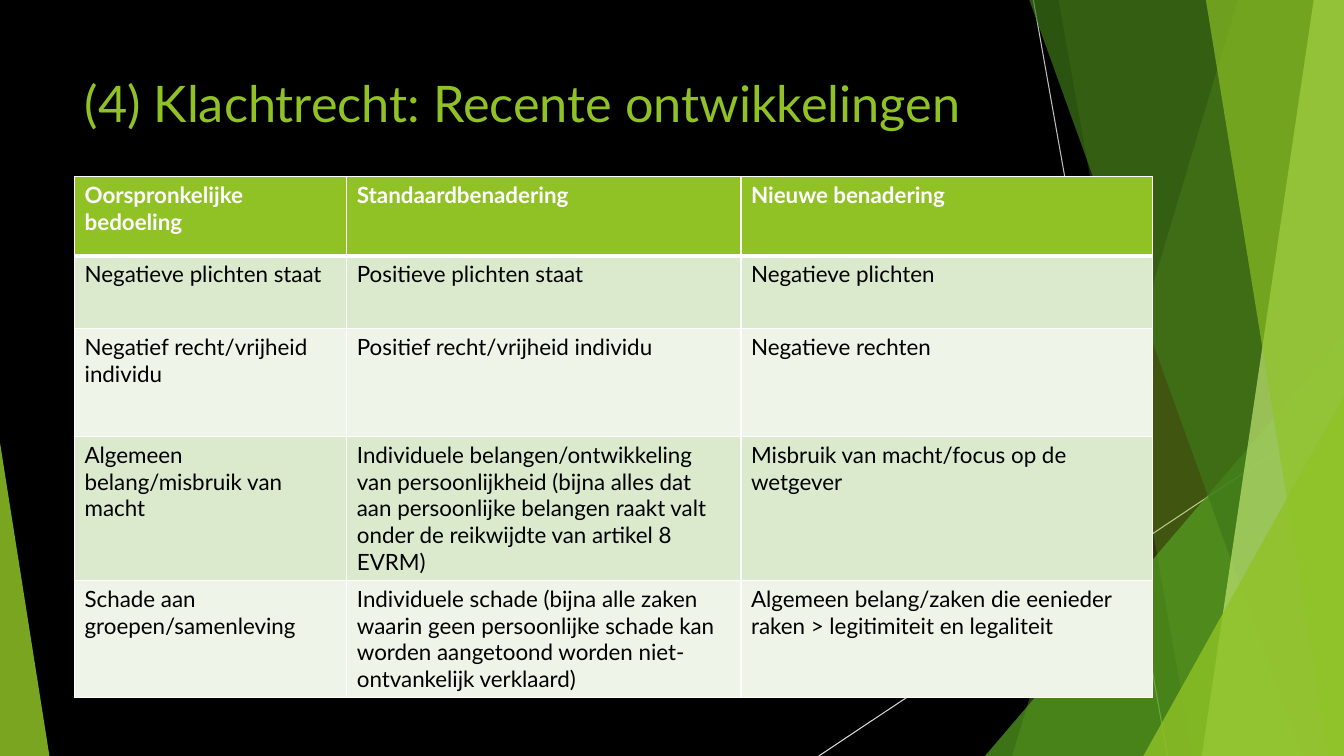
from dataclasses import dataclass

import lxml.etree
import pptx
import pptx.dml.color
import pptx.enum.shapes
import pptx.enum.text
import pptx.oxml.ns
import pptx.util

RGBColor = pptx.dml.color.RGBColor
BLACK = RGBColor(0x00, 0x00, 0x00)
WHITE = RGBColor(0xFF, 0xFF, 0xFF)
GREY = RGBColor(0xBF, 0xBF, 0xBF)
LIGHT_GREY = RGBColor(0xD9, 0xD9, 0xD9)
LIME = RGBColor(0x90, 0xC2, 0x26)
GREEN = RGBColor(0x54, 0xA0, 0x21)
DARK_GREEN = RGBColor(0x3F, 0x78, 0x19)
PALE_LIME = RGBColor(0xC0, 0xE4, 0x74)
BAND_DARK = RGBColor(0xDB, 0xE9, 0xCD)
BAND_LIGHT = RGBColor(0xEE, 0xF4, 0xE8)
FONT = "Lato"

SLIDE_WIDTH = pptx.util.Inches(13.33)
SLIDE_HEIGHT = pptx.util.Inches(7.5)


# All positions are percentages of the slide's width and height
@dataclass
class Ray:
    start: tuple[float, float]
    end: tuple[float, float]
    color: RGBColor


@dataclass
class Facet:
    """Band from the slide's top to its bottom, reaching the right edge."""
    top_left: float
    bottom_left: float
    color: RGBColor
    opacity: int


@dataclass
class Corner:
    """Triangle standing on the slide's bottom edge."""
    left: float
    right: float
    top: float
    apex: float
    color: RGBColor
    opacity: int


RAYS = [
    Ray((76.89, 0), (86.87, 100), GREY),
    Ray((100, 53.73), (60.92, 100), LIGHT_GREY),
]
DECORATION = [
    Facet(92.12, 75.32, LIME, 30),
    Facet(78.77, 88.75, LIME, 20),
    Corner(73.29, 100, 44.4, 1, GREEN, 72),
    Facet(76.59, 96.85, DARK_GREEN, 70),
    Facet(97.75, 89.42, PALE_LIME, 70),
    Facet(89.72, 98.87, LIME, 65),
    Corner(85.07, 100, 52.4, 1, LIME, 80),
    Corner(0, 3.68, 58.53, 0, LIME, 85),
]

TITLE = "(4) Klachtrecht: Recente ontwikkelingen"
COLUMN_WIDTHS = [20.26, 29.33, 30.61]
ROW_HEIGHTS = [10.53, 9.6, 14.27, 14.27, 14.27]
ROWS = [
    ["Oorspronkelijke bedoeling", "Standaardbenadering", "Nieuwe benadering"],
    ["Negatieve plichten staat", "Positieve plichten staat", "Negatieve plichten"],
    ["Negatief recht/vrijheid individu", "Positief recht/vrijheid individu",
     "Negatieve rechten"],
    ["Algemeen belang/misbruik van macht",
     "Individuele belangen/ontwikkeling van persoonlijkheid (bijna alles dat aan "
     "persoonlijke belangen raakt valt onder de reikwijdte van artikel 8 EVRM)",
     "Misbruik van macht/focus op de wetgever"],
    ["Schade aan groepen/samenleving",
     "Individuele schade (bijna alle zaken waarin geen persoonlijke schade kan "
     "worden aangetoond worden niet-ontvankelijk verklaard)",
     "Algemeen belang/zaken die eenieder raken > legitimiteit en legaliteit"],
]


def across(percent: float) -> int:
    return round(SLIDE_WIDTH * percent / 100)


def down(percent: float) -> int:
    return round(SLIDE_HEIGHT * percent / 100)


def add_xml(parent, tag: str, **attributes: str):
    return lxml.etree.SubElement(parent, pptx.oxml.ns.qn(tag), **attributes)


def add_run(para, text: str, size: float, color: RGBColor, bold: bool = False) -> None:
    span = para.add_run()
    span.text = text
    span.font.name = FONT
    span.font.size = pptx.util.Pt(size)
    span.font.bold = bold
    span.font.color.rgb = color


def draw_ray(page, ray: Ray) -> None:
    line = page.shapes.add_connector(
        pptx.enum.shapes.MSO_CONNECTOR.STRAIGHT,
        across(ray.start[0]), down(ray.start[1]), across(ray.end[0]), down(ray.end[1]))
    line.line.color.rgb = ray.color
    line.line.width = pptx.util.Pt(0.75)
    add_xml(line.element.spPr, "a:effectLst")


def draw_decoration(page, part: Facet | Corner) -> None:
    if isinstance(part, Facet):
        builder = page.shapes.build_freeform(across(part.top_left), 0)
        builder.add_line_segments([
            (SLIDE_WIDTH, 0), (SLIDE_WIDTH, SLIDE_HEIGHT),
            (across(part.bottom_left), SLIDE_HEIGHT)], close=True)
        shape = builder.convert_to_shape()
    else:
        shape = page.shapes.add_shape(
            pptx.enum.shapes.MSO_SHAPE.ISOSCELES_TRIANGLE,
            across(part.left), down(part.top),
            across(part.right - part.left), down(100 - part.top))
        shape.adjustments[0] = part.apex
    shape.shadow.inherit = False
    shape.line.fill.background()
    shape.fill.solid()
    shape.fill.fore_color.rgb = part.color
    color = shape.element.spPr.find(".//" + pptx.oxml.ns.qn("a:srgbClr"))
    add_xml(color, "a:alpha", val=str(part.opacity * 1000))


def write_title(page) -> None:
    title = page.shapes.title
    title.left, title.top = across(5.55), down(8.93)
    title.width, title.height = across(70.52), down(19.2)
    frame = title.text_frame
    frame.word_wrap = True
    frame.auto_size = pptx.enum.text.MSO_AUTO_SIZE.NONE
    frame.vertical_anchor = pptx.enum.text.MSO_ANCHOR.TOP
    para = frame.paragraphs[0]
    para.alignment = pptx.enum.text.PP_ALIGN.LEFT
    add_run(para, TITLE, 36, LIME)


def draw_borders(cell, top: float, bottom: float) -> None:
    properties = cell._tc.get_or_add_tcPr()
    for side, width in {"L": 1, "R": 1, "T": top, "B": bottom}.items():
        border = add_xml(properties, f"a:ln{side}", w=str(pptx.util.Pt(width)))
        fill = add_xml(border, "a:solidFill")
        add_xml(fill, "a:srgbClr", val=str(WHITE))


def draw_table(page) -> None:
    table = page.shapes.add_table(
        len(ROWS), len(COLUMN_WIDTHS), across(5.55), down(23.33),
        across(sum(COLUMN_WIDTHS)), down(sum(ROW_HEIGHTS))).table
    for column, width in zip(table.columns, COLUMN_WIDTHS):
        column.width = across(width)
    for index, (row, height, texts) in enumerate(zip(table.rows, ROW_HEIGHTS, ROWS)):
        row.height = down(height)
        header = index == 0
        band = LIME if header else (BAND_DARK if index % 2 else BAND_LIGHT)
        for cell, text in zip(row.cells, texts):
            # The header is set off from the body by a thicker rule
            draw_borders(cell, 3 if index == 1 else 1, 3 if header else 1)
            cell.fill.solid()
            cell.fill.fore_color.rgb = band
            add_run(cell.text_frame.paragraphs[0], text, 16,
                    WHITE if header else BLACK, header)


def main() -> None:
    deck = pptx.Presentation()
    deck.slide_width, deck.slide_height = SLIDE_WIDTH, SLIDE_HEIGHT
    page = deck.slides.add_slide(deck.slide_layouts.get_by_name("Title Only"))
    page.background.fill.solid()
    page.background.fill.fore_color.rgb = BLACK

    # Faceted background
    for ray in RAYS:
        draw_ray(page, ray)
    for part in DECORATION:
        draw_decoration(page, part)

    # Content
    write_title(page)
    draw_table(page)
    deck.save("out.pptx")


if __name__ == "__main__":
    main()
